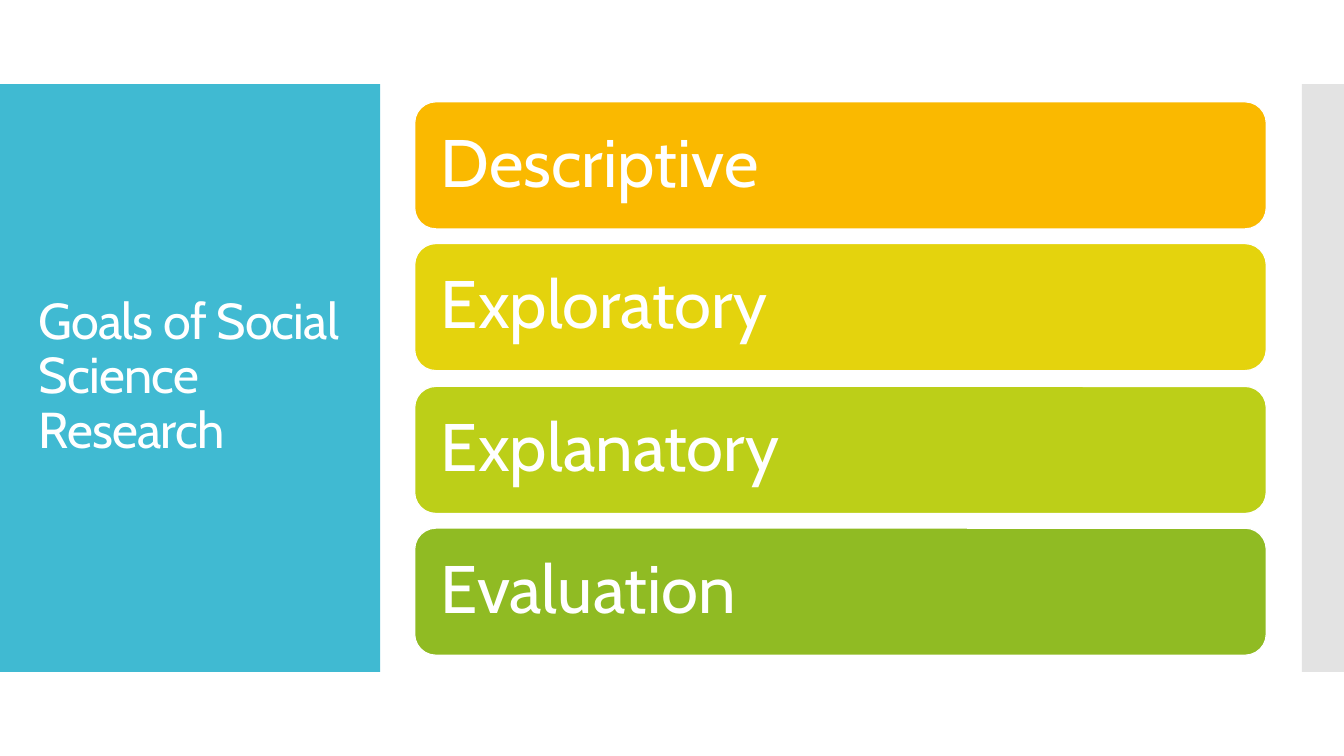
from dataclasses import dataclass

from lxml import etree
from pptx import Presentation
from pptx import util as u
from pptx.dml.color import RGBColor
from pptx.enum import shapes, text
from pptx.oxml.ns import qn
from pptx.shapes.autoshape import Shape
from pptx.slide import Slide

EMU_PER_PX = 9525


@dataclass(frozen=True)
class Theme:
    font: str = "Cabin"
    white: str = "FFFFFF"
    panel: str = "40BAD2"
    strip: str = "C8C8C8"
    strip_alpha: int = 50
    title_size: int = 36
    goal_size: int = 48
    title_tracking: float = -0.6
    goal_outline: float = 0.85
    line_spacing: float = 0.9


@dataclass(frozen=True)
class Box:
    left: int
    top: int
    width: int
    height: int


@dataclass(frozen=True)
class Goal:
    label: str
    fill: str


THEME = Theme()
SLIDE = Box(0, 0, 1280, 720)
PANEL = Box(0, 80, 362, 560)
STRIP = Box(1240, 80, 40, 560)
TITLE = Box(27, 118, 309, 483)
GOAL_COLUMN = Box(395, 97, 811, 527)
GOAL_HEIGHT = 121
TITLE_INSET = 10
GOAL_INSET = 19
GOALS = [
    Goal("Descriptive", "FAB900"),
    Goal("Exploratory", "E4D30D"),
    Goal("Explanatory", "BCCF18"),
    Goal("Evaluation", "90BB23"),
]


def px(length: int) -> u.Emu:
    return u.Emu(length * EMU_PER_PX)


def place(box: Box) -> tuple[u.Emu, u.Emu, u.Emu, u.Emu]:
    return px(box.left), px(box.top), px(box.width), px(box.height)


def add_block(slide: Slide, kind: shapes.MSO_SHAPE, box: Box, fill: str) -> Shape:
    block = slide.shapes.add_shape(kind, *place(box))
    block.shadow.inherit = False
    block.fill.solid()
    block.fill.fore_color.rgb = RGBColor.from_string(fill)
    block.line.fill.background()
    return block


def set_alpha(block: Shape, percent: int) -> None:
    color = block.fill._xPr.find(qn("a:solidFill"))[0]
    etree.SubElement(color, qn("a:alpha")).set("val", str(percent * 1000))


def write(holder: Shape, words: str, size: int, inset: int) -> None:
    frame = holder.text_frame
    frame.word_wrap = True
    frame.vertical_anchor = text.MSO_ANCHOR.MIDDLE
    frame.margin_left = frame.margin_right = px(inset)
    frame.margin_top = frame.margin_bottom = px(inset)
    paragraph = frame.paragraphs[0]
    paragraph.text = words
    paragraph.alignment = text.PP_ALIGN.LEFT
    paragraph.line_spacing = THEME.line_spacing
    paragraph.font.name = THEME.font
    paragraph.font.size = u.Pt(size)
    paragraph.font.color.rgb = RGBColor.from_string(THEME.white)


def add_title(slide: Slide, words: str) -> None:
    title = slide.shapes.add_textbox(*place(TITLE))
    write(title, words, THEME.title_size, TITLE_INSET)
    run = title.text_frame.paragraphs[0].runs[0]
    run.font._element.set("spc", str(round(THEME.title_tracking * 100)))


def add_goals(slide: Slide, goals: list[Goal]) -> None:
    pitch = (GOAL_COLUMN.height - GOAL_HEIGHT) / (len(goals) - 1)
    for index, goal in enumerate(goals):
        top = round(GOAL_COLUMN.top + index * pitch)
        box = Box(GOAL_COLUMN.left, top, GOAL_COLUMN.width, GOAL_HEIGHT)
        bar = add_block(slide, shapes.MSO_SHAPE.ROUNDED_RECTANGLE, box, goal.fill)
        bar.line.color.rgb = RGBColor.from_string(THEME.white)
        bar.line.width = u.Pt(THEME.goal_outline)
        write(bar, goal.label, THEME.goal_size, GOAL_INSET)


def main() -> None:
    deck = Presentation()
    deck.slide_width, deck.slide_height = px(SLIDE.width), px(SLIDE.height)
    slide = deck.slides.add_slide(deck.slide_layouts[6])
    add_block(slide, shapes.MSO_SHAPE.RECTANGLE, PANEL, THEME.panel)
    strip = add_block(slide, shapes.MSO_SHAPE.RECTANGLE, STRIP, THEME.strip)
    set_alpha(strip, THEME.strip_alpha)
    add_title(slide, "Goals of Social Science Research")
    add_goals(slide, GOALS)
    deck.save("out.pptx")


if __name__ == "__main__":
    main()
